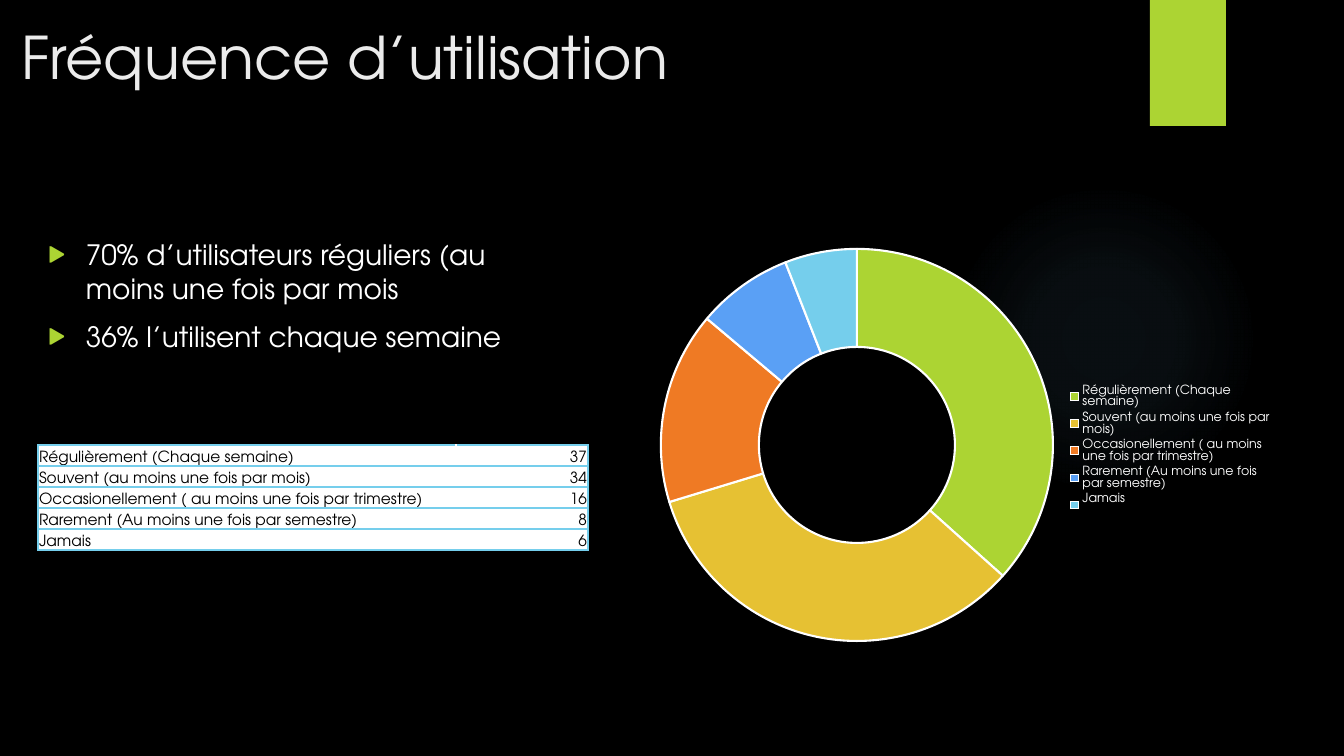
from lxml.etree import SubElement
from pptx import Presentation
from pptx.chart.data import CategoryChartData
from pptx.dml.color import RGBColor
from pptx.enum.chart import XL_CHART_TYPE, XL_LEGEND_POSITION
from pptx.enum.shapes import MSO_SHAPE
from pptx.enum.text import MSO_ANCHOR, PP_ALIGN
from pptx.oxml import parse_xml
from pptx.oxml.ns import nsdecls, qn
from pptx.util import Emu, Pt

BLACK = RGBColor(0x00, 0x00, 0x00)
WHITE = RGBColor(0xFF, 0xFF, 0xFF)
OFF_WHITE = RGBColor(0xEB, 0xEB, 0xEB)
LIME = RGBColor(0xAC, 0xD4, 0x33)
GOLD = RGBColor(0xE6, 0xC1, 0x33)
ORANGE = RGBColor(0xEF, 0x7A, 0x24)
BLUE = RGBColor(0x5A, 0xA0, 0xF5)
SKY = RGBColor(0x75, 0xCE, 0xEC)
GLOW = RGBColor(0x7A, 0xC4, 0xF0)

BULLETS = [
    "70% d’utilisateurs réguliers (au moins une fois par mois",
    "36% l’utilisent chaque semaine",
]
FREQUENCIES = [
    ("Régulièrement (Chaque semaine)", 37, LIME),
    ("Souvent (au moins une fois par mois)", 34, GOLD),
    ("Occasionellement ( au moins une fois par trimestre)", 16, ORANGE),
    ("Rarement (Au moins une fois par semestre)", 8, BLUE),
    ("Jamais", 6, SKY),
]


def px(length):
    """Turn pixels, 1344 to the slide width, into EMU."""
    return Emu(length * 63500 // 7)


class SlideBuilder:
    """Draws styled elements on one slide."""

    font_name = "TeX Gyre Adventor"

    def __init__(self, page):
        self.page = page
        page.background.fill.solid()
        page.background.fill.fore_color.rgb = BLACK

    def set_font(self, font, size, color):
        font.name = self.font_name
        font.size = Pt(size)
        font.color.rgb = color

    def shape(self, kind, left, top, width, height, color):
        shape = self.page.shapes.add_shape(kind, px(left), px(top), px(width), px(height))
        shape.shadow.inherit = False
        shape.fill.solid()
        shape.fill.fore_color.rgb = color
        shape.line.fill.background()
        return shape

    def glow(self, left, top, size, color, stops):
        shape = self.shape(MSO_SHAPE.OVAL, left, top, size, size, color)
        marks = "".join(
            f'<a:gs pos="{position * 1000}"><a:srgbClr val="{color}">'
            f'<a:alpha val="{opacity * 1000}"/></a:srgbClr></a:gs>'
            for position, opacity in stops
        )
        gradient = parse_xml(
            f'<a:gradFill {nsdecls("a")}><a:gsLst>{marks}</a:gsLst><a:path path="circle">'
            '<a:fillToRect l="50000" t="50000" r="50000" b="50000"/></a:path></a:gradFill>'
        )
        properties = shape.element.spPr
        properties.replace(properties.find(qn("a:solidFill")), gradient)

    def text(self, left, top, width, height, lines, size, color, bullet_color=None):
        box = self.page.shapes.add_textbox(px(left), px(top), px(width), px(height))
        frame = box.text_frame
        frame.word_wrap = True
        for index, line in enumerate(lines):
            para = frame.add_paragraph() if index else frame.paragraphs[0]
            para.text = line
            if index:
                para.space_before = Pt(10)
            if bullet_color is not None:
                self.bullet(para, bullet_color)
            self.set_font(para.font, size, color)

    def bullet(self, para, color):
        properties = para._p.get_or_add_pPr()
        properties.set("marL", str(px(38)))
        properties.set("indent", str(-px(38)))
        tint = SubElement(properties, qn("a:buClr"))
        SubElement(tint, qn("a:srgbClr"), val=str(color))
        SubElement(properties, qn("a:buSzPct"), val="80000")
        SubElement(properties, qn("a:buFont"), typeface=self.font_name)
        SubElement(properties, qn("a:buChar"), char="▶")

    def table(self, left, top, widths, row_height, rows):
        frame = self.page.shapes.add_table(
            len(rows), len(widths), px(left), px(top), px(sum(widths)), px(row_height * len(rows))
        )
        table = frame.table
        table.first_row = table.horz_banding = False
        for column, width in zip(table.columns, widths):
            column.width = px(width)
        for row, values in zip(table.rows, rows):
            row.height = px(row_height)
            for index, (cell, value) in enumerate(zip(row.cells, values)):
                sides = "RTB" if index else "LTB"
                self.cell(cell, value, PP_ALIGN.RIGHT if index else PP_ALIGN.LEFT, sides)

    def cell(self, cell, value, alignment, sides):
        cell.margin_left = cell.margin_right = cell.margin_top = px(1)
        cell.margin_bottom = 0
        cell.vertical_anchor = MSO_ANCHOR.BOTTOM
        cell.fill.solid()
        cell.fill.fore_color.rgb = WHITE
        para = cell.text_frame.paragraphs[0]
        para.text = str(value)
        para.alignment = alignment
        self.set_font(para.font, 11, BLACK)
        for index, side in enumerate(sides):
            border = parse_xml(
                f'<a:ln{side} {nsdecls("a")} w="12700"><a:solidFill>'
                f'<a:srgbClr val="{SKY}"/></a:solidFill></a:ln{side}>'
            )
            cell._tc.get_or_add_tcPr().insert(index, border)

    def doughnut(self, left, top, width, height, entries):
        labels, values, colors = zip(*entries)
        chart_data = CategoryChartData()
        chart_data.categories = labels
        chart_data.add_series("Series 1", values)
        chart = self.page.shapes.add_chart(
            XL_CHART_TYPE.DOUGHNUT, px(left), px(top), px(width), px(height), chart_data
        ).chart
        self.set_font(chart.font, 10, WHITE)
        chart.has_title = False
        chart.has_legend = True
        chart.legend.position = XL_LEGEND_POSITION.RIGHT
        chart.legend.include_in_layout = False
        self.set_font(chart.legend.font, 9, WHITE)
        plot = chart.plots[0]
        plot.vary_by_categories = True
        for index, color in enumerate(colors):
            style = plot.series[0].points[index].format
            style.fill.solid()
            style.fill.fore_color.rgb = color
            style.line.color.rgb = WHITE
            style.line.width = Pt(1.5)
        next(chart.element.iter(qn("c:holeSize"))).set("val", "75")


def main():
    deck = Presentation()
    deck.slide_width, deck.slide_height = px(1344), px(756)
    slide = SlideBuilder(deck.slides.add_slide(deck.slide_layouts[6]))
    slide.glow(949, 184, 310, GLOW, [(0, 7), (36, 6), (69, 0)])
    slide.shape(MSO_SHAPE.RECTANGLE, 1150, 0, 76, 126, LIME)
    slide.text(12, 16, 792, 146, ["Fréquence d’utilisation"], 42, OFF_WHITE)
    slide.text(38, 233, 521, 140, BULLETS, 20, WHITE, LIME)
    slide.doughnut(647, 207, 635, 476, FREQUENCIES)
    slide.table(38, 445, [418, 132], 21, [entry[:2] for entry in FREQUENCIES])
    deck.save("out.pptx")


if __name__ == "__main__":
    main()
